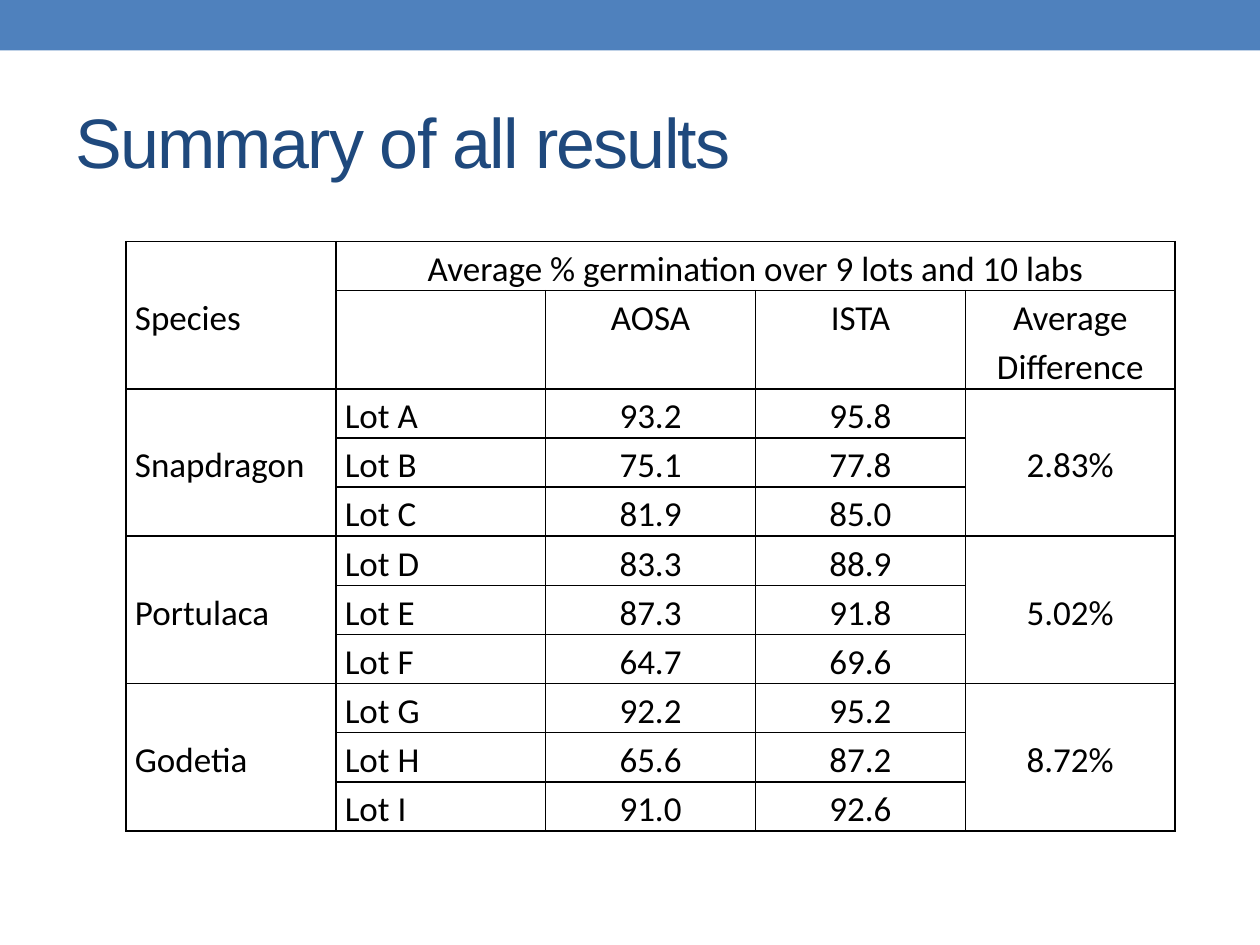
from dataclasses import dataclass

from lxml.etree import SubElement
from pptx import Presentation
from pptx.dml.color import RGBColor
from pptx.enum.shapes import MSO_SHAPE
from pptx.enum.text import MSO_ANCHOR, PP_ALIGN
from pptx.oxml import parse_xml
from pptx.oxml.ns import nsdecls, qn
from pptx.util import Cm, Pt


@dataclass(frozen=True)
class Theme:
    band: str = "4F81BD"
    title: str = "1F497D"
    ink: str = "000000"
    title_font: str = "Arial"
    body_font: str = "Calibri"
    title_size: int = 40
    body_size: int = 20
    line_spacing: float = 1.15


SPECIES = [
    ("Snapdragon", "2.83%", [("Lot A", "93.2", "95.8"),
                             ("Lot B", "75.1", "77.8"),
                             ("Lot C", "81.9", "85.0")]),
    ("Portulaca", "5.02%", [("Lot D", "83.3", "88.9"),
                            ("Lot E", "87.3", "91.8"),
                            ("Lot F", "64.7", "69.6")]),
    ("Godetia", "8.72%", [("Lot G", "92.2", "95.2"),
                          ("Lot H", "65.6", "87.2"),
                          ("Lot I", "91.0", "92.6")]),
]
HEADER_ROWS = 2
COLUMNS = 5


class SlideBuilder:
    def __init__(self, page, theme):
        self.page = page
        self.theme = theme

    def style(self, paragraph, font, size, color):
        paragraph.font.name = font
        paragraph.font.size = Pt(size)
        paragraph.font.color.rgb = RGBColor.from_string(color)

    def band(self, width, height):
        shape = self.page.shapes.add_shape(MSO_SHAPE.RECTANGLE, 0, 0, width, height)
        shape.shadow.inherit = False
        shape.fill.solid()
        shape.fill.fore_color.rgb = RGBColor.from_string(self.theme.band)
        shape.line.fill.background()

    def title(self, text, left, top, width, height):
        frame = self.page.shapes.add_textbox(left, top, width, height).text_frame
        frame.word_wrap = True
        frame.vertical_anchor = MSO_ANCHOR.MIDDLE
        paragraph = frame.paragraphs[0]
        span = paragraph.add_run()
        span.text = text
        self.style(paragraph, self.theme.title_font, self.theme.title_size,
                   self.theme.title)
        span.font._element.set("spc", "-100")

    def table(self, rows, left, top, column_width, row_height):
        """Add an unfilled, fully ruled table of equal columns and rows."""
        table = self.page.shapes.add_table(
            rows, COLUMNS, left, top, column_width * COLUMNS, row_height * rows).table
        table.first_row = table.horz_banding = False
        for column in table.columns:
            column.width = column_width
        for row in table.rows:
            row.height = row_height
            for cell in row.cells:
                cell.fill.background()
                self.rule(cell)
        return table

    def rule(self, cell):
        properties = cell._tc.get_or_add_tcPr()
        for index, side in enumerate(("lnL", "lnR", "lnT", "lnB")):
            line = parse_xml(f'<a:{side} {nsdecls("a")} w="{Pt(1)}"/>')
            fill = SubElement(line, qn("a:solidFill"))
            SubElement(fill, qn("a:srgbClr"), val=self.theme.ink)
            properties.insert(index, line)

    def cell(self, table, row, column, text, centred=True, last=None):
        """Fill a cell, merging it through the (row, column) in last if given."""
        cell = table.cell(row, column)
        if last:
            cell.merge(table.cell(*last))
            cell.vertical_anchor = MSO_ANCHOR.MIDDLE
        cell.margin_left = cell.margin_right = Cm(0.18)
        cell.margin_top = cell.margin_bottom = 0
        paragraph = cell.text_frame.paragraphs[0]
        paragraph.text = text
        paragraph.alignment = PP_ALIGN.CENTER if centred else PP_ALIGN.LEFT
        paragraph.line_spacing = self.theme.line_spacing
        self.style(paragraph, self.theme.body_font, self.theme.body_size,
                   self.theme.ink)


def add_results(builder):
    row_count = HEADER_ROWS + sum(len(lots) for _, _, lots in SPECIES)
    row_height = Cm(0.99)
    table = builder.table(row_count, Cm(2.54), Cm(4.87), Cm(4.23), row_height)
    table.rows[1].height = row_height * 2

    builder.cell(table, 0, 0, "Species", centred=False, last=(1, 0))
    builder.cell(table, 0, 1, "Average % germination over 9 lots and 10 labs",
                 last=(0, COLUMNS - 1))
    for column, heading in enumerate(("AOSA", "ISTA", "Average Difference"), 2):
        builder.cell(table, 1, column, heading)

    first = HEADER_ROWS
    for species, difference, lots in SPECIES:
        last = first + len(lots) - 1
        builder.cell(table, first, 0, species, centred=False, last=(last, 0))
        builder.cell(table, first, COLUMNS - 1, difference, last=(last, COLUMNS - 1))
        for row, values in enumerate(lots, first):
            for column, value in enumerate(values, 1):
                builder.cell(table, row, column, value, centred=column > 1)
        first = last + 1


def main():
    deck = Presentation()
    deck.slide_width, deck.slide_height = Cm(25.4), Cm(19.05)
    page = deck.slides.add_slide(deck.slide_layouts[6])
    builder = SlideBuilder(page, Theme())
    builder.band(deck.slide_width, Cm(1.02))
    builder.title("Summary of all results", Cm(1.27), Cm(1.47), Cm(22.86), Cm(2.74))
    add_results(builder)
    deck.save("out.pptx")


if __name__ == "__main__":
    main()
